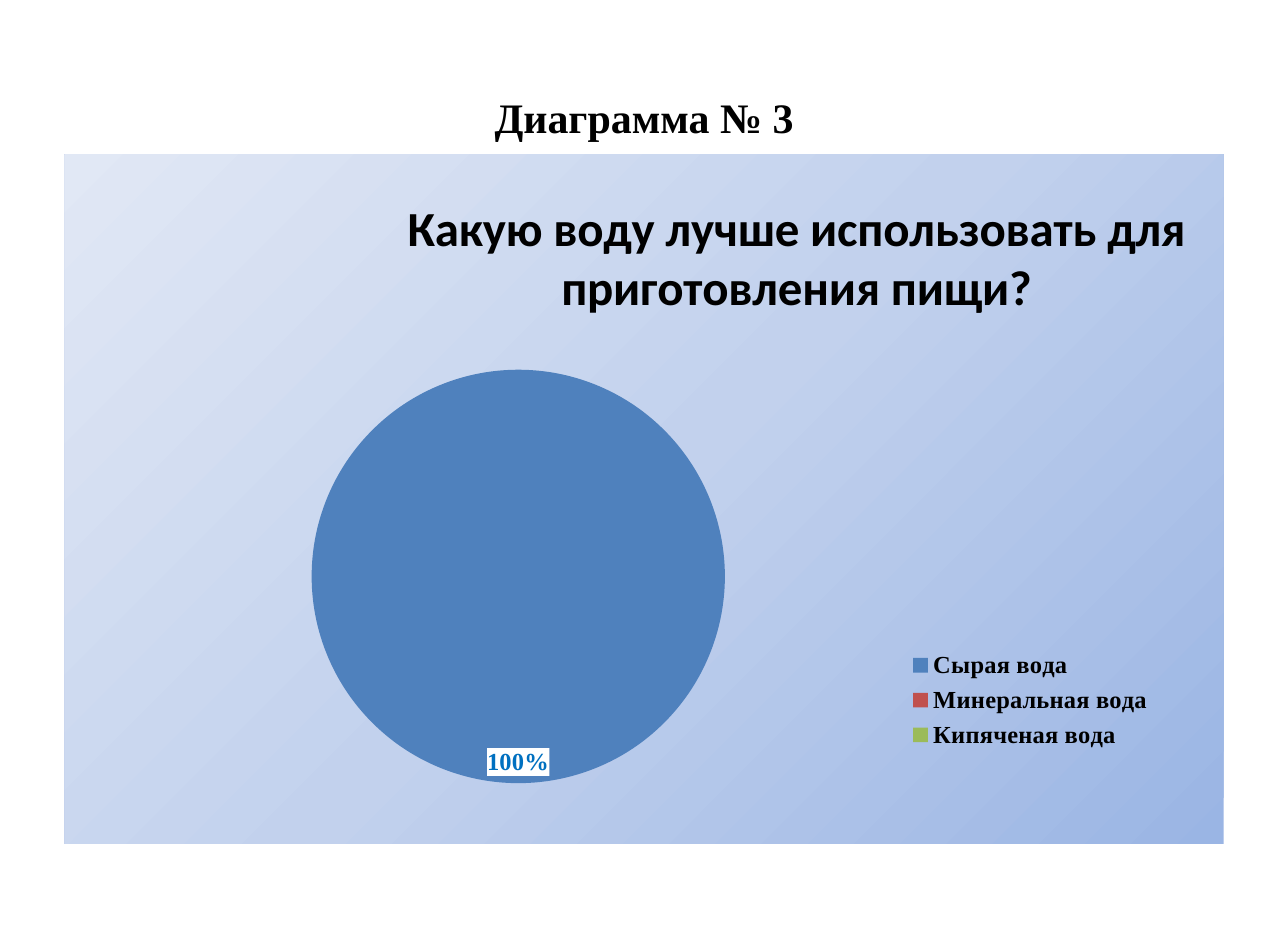
from lxml import etree
from pptx import Presentation
from pptx.chart.data import CategoryChartData
from pptx.dml.color import RGBColor
from pptx.enum.chart import XL_CHART_TYPE, XL_LABEL_POSITION, XL_LEGEND_POSITION
from pptx.enum.text import MSO_ANCHOR, PP_ALIGN
from pptx.oxml import parse_xml
from pptx.oxml.ns import nsdecls, qn
from pptx.util import Emu, Pt

BLACK = RGBColor(0x00, 0x00, 0x00)
WHITE = RGBColor(0xFF, 0xFF, 0xFF)
LABEL_BLUE = RGBColor(0x00, 0x70, 0xC0)
BLUE = RGBColor(0x4F, 0x81, 0xBD)
RED = RGBColor(0xC0, 0x50, 0x4D)
GREEN = RGBColor(0x9B, 0xBB, 0x59)
GRADIENT = [
    (0, RGBColor(0x9A, 0xB5, 0xE4)),
    (50, RGBColor(0xC2, 0xD1, 0xED)),
    (100, RGBColor(0xE1, 0xE8, 0xF5)),
]
GRADIENT_ANGLE = 225

HEADING = "Диаграмма № 3"
QUESTION = "Какую воду лучше использовать для приготовления пищи?"
ANSWERS = [
    ("Сырая вода", 100, BLUE),
    ("Минеральная вода", 0, RED),
    ("Кипяченая вода", 0, GREEN),
]
EXPLOSION = 25

EMU_PER_PX = 3048
SLIDE_WIDTH = Emu(9361488)
SLIDE_HEIGHT = Emu(6858000)
HEADING_BOX = (154, 90, 2764, 375)
CHART_BOX = (154, 369, 2764, 1642)
PLOT_PLACE = {"x": 185, "y": 266, "w": 1794, "h": 1232}
QUESTION_PLACE = {"x": 797, "y": 75}
LEGEND_PLACE = {"x": 1999, "y": 1167, "w": 608, "h": 266}


def emu(lengths):
    return [Emu(length * EMU_PER_PX) for length in lengths]


def style_font(font, size, face="Times New Roman", color=BLACK, bold=True):
    font.size = Pt(size)
    font.name = face
    font.bold = bold
    font.color.rgb = color


def write_text(frame, text, align=PP_ALIGN.CENTER, **style):
    para = frame.paragraphs[0]
    para.alignment = align
    span = para.add_run()
    span.text = text
    style_font(span.font, **style)


def set_layout(element, place, index, inner=False):
    for old in element.findall(qn("c:layout")):
        element.remove(old)
    chart_width, chart_height = CHART_BOX[2:]
    holder = etree.Element(qn("c:layout"))
    manual = etree.SubElement(holder, qn("c:manualLayout"))
    settings = [("layoutTarget", "inner")] if inner else []
    settings += [("xMode", "edge"), ("yMode", "edge")]
    for name, length in place.items():
        whole = chart_width if name in "xw" else chart_height
        settings.append((name, length / whole))
    for name, value in settings:
        etree.SubElement(manual, qn("c:" + name)).set("val", str(value))
    element.insert(index, holder)


def fill_properties(fill):
    return parse_xml(f'<c:spPr {nsdecls("c", "a")}>{fill}<a:ln><a:noFill/></a:ln></c:spPr>')


def solid(color):
    return f'<a:solidFill><a:srgbClr val="{color}"/></a:solidFill>'


def gradient(stops, angle):
    marks = "".join(
        f'<a:gs pos="{place * 1000}"><a:srgbClr val="{color}"/></a:gs>' for place, color in stops
    )
    return f'<a:gradFill><a:gsLst>{marks}</a:gsLst><a:lin ang="{angle * 60000}" scaled="0"/></a:gradFill>'


def add_pie(page):
    data = CategoryChartData()
    data.categories = [name for name, value, color in ANSWERS]
    data.add_series(QUESTION, [value for name, value, color in ANSWERS])
    chart = page.shapes.add_chart(XL_CHART_TYPE.PIE, *emu(CHART_BOX), data).chart
    style_font(chart.font, 10, face="Calibri", bold=False)

    chart.has_title = True
    write_text(chart.chart_title.text_frame, QUESTION, size=28, face="Calibri")
    chart.has_legend = True
    chart.legend.position = XL_LEGEND_POSITION.RIGHT
    chart.legend.include_in_layout = False
    style_font(chart.legend.font, 14)

    plot = chart.plots[0]
    plot.vary_by_categories = True
    series = plot.series[0]
    for index, (name, value, color) in enumerate(ANSWERS):
        fill = series.points[index].format.fill
        fill.solid()
        fill.fore_color.rgb = color

    labels = series.data_labels
    labels.show_percentage = True
    labels.show_value = False
    labels.number_format = "0%"
    labels.number_format_is_linked = False
    labels.position = XL_LABEL_POSITION.INSIDE_END
    style_font(labels.font, 14, color=LABEL_BLUE)

    series_xml = series._element
    explosion = etree.Element(qn("c:explosion"))
    explosion.set("val", str(EXPLOSION))
    series_xml.find(qn("c:dPt")).addprevious(explosion)
    labels_xml = series_xml.find(qn("c:dLbls"))
    labels_xml.find(qn("c:txPr")).addprevious(fill_properties(solid(WHITE)))
    empty = [index for index, (name, value, color) in enumerate(ANSWERS) if value == 0]
    for position, index in enumerate(empty):
        label = etree.Element(qn("c:dLbl"))
        etree.SubElement(label, qn("c:idx")).set("val", str(index))
        etree.SubElement(label, qn("c:delete")).set("val", "1")
        labels_xml.insert(position, label)

    chart_xml = chart._chartSpace.find(qn("c:chart"))
    chart_xml.addnext(fill_properties(gradient(GRADIENT, GRADIENT_ANGLE)))
    set_layout(chart_xml.find(qn("c:plotArea")), PLOT_PLACE, 0, inner=True)
    set_layout(chart_xml.find(qn("c:title")), QUESTION_PLACE, 1)
    set_layout(chart_xml.find(qn("c:legend")), LEGEND_PLACE, 1)


def main():
    deck = Presentation()
    deck.slide_width = SLIDE_WIDTH
    deck.slide_height = SLIDE_HEIGHT
    page = deck.slides.add_slide(deck.slide_layouts[5])
    heading = page.shapes.title
    heading.left, heading.top, heading.width, heading.height = emu(HEADING_BOX)
    heading.text_frame.vertical_anchor = MSO_ANCHOR.MIDDLE
    write_text(heading.text_frame, HEADING, size=24)
    add_pie(page)
    deck.save("out.pptx")


if __name__ == "__main__":
    main()
